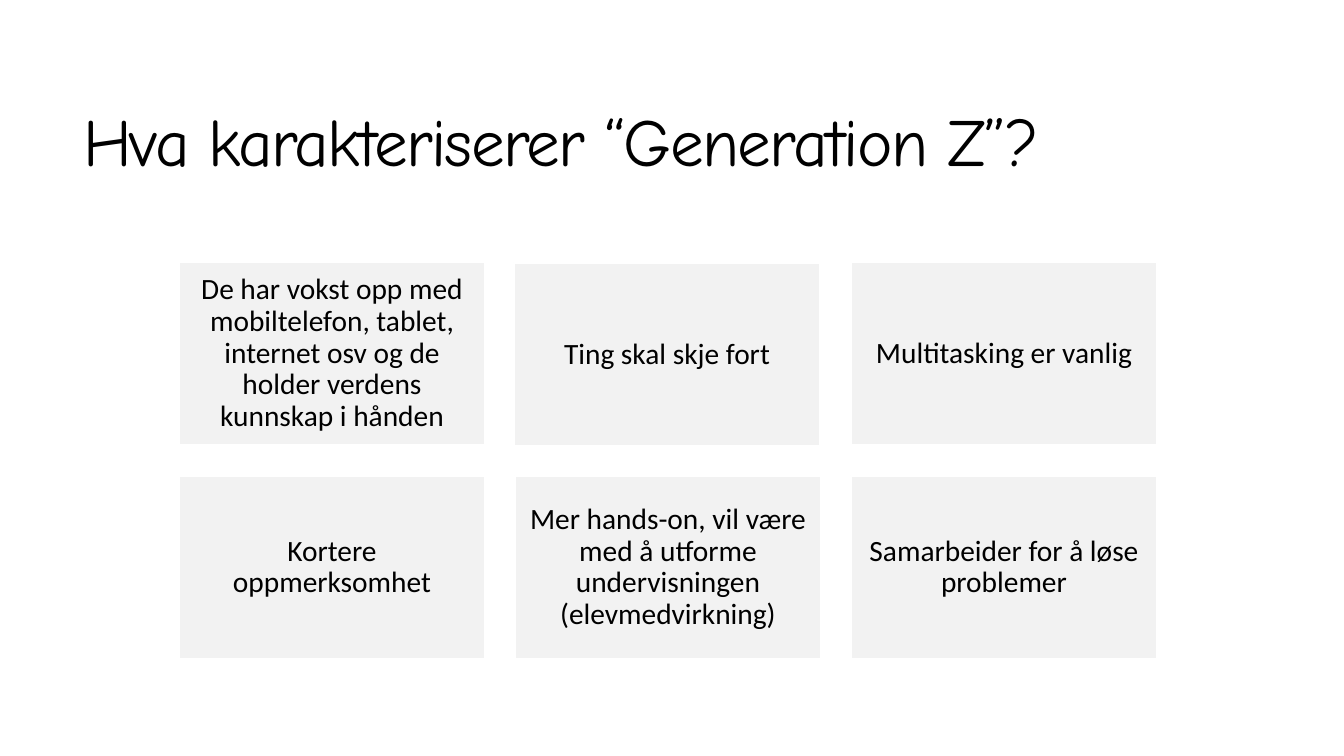
"""Build a title slide with a grid of six traits of Generation Z."""
from pptx import Presentation
from pptx.dml.color import RGBColor
from pptx.enum import shapes, text
from pptx.util import Pt

TITLE = "Hva karakteriserer “Generation Z”?"
TRAITS = [
    "De har vokst opp med mobiltelefon, tablet, internet osv og de holder verdens kunnskap i hånden",
    "Ting skal skje fort",
    "Multitasking er vanlig",
    "Kortere oppmerksomhet",
    "Mer hands-on, vil være med å utforme undervisningen (elevmedvirkning)",
    "Samarbeider for å løse problemer",
]
NUDGES = {"Ting skal skje fort": (-1, 1)}

BLACK = RGBColor(0, 0, 0)
WHITE = RGBColor(255, 255, 255)
GREY = RGBColor(0xF2, 0xF2, 0xF2)

SLIDE_SIZE = (1344, 756)
TITLE_AREA = (73, 55, 1187, 182)
COLUMNS = 3
GRID_LEFT, GRID_TOP = 179, 262
BOX_WIDTH, BOX_HEIGHT = 306, 183
STEP_X, STEP_Y = 336, 214
INSET = 9


def px(length):
    """Turn px into EMU."""
    return round(length * 914400 / 100.8)


def write(shape, words, font_name, size, align, line_spacing):
    """Put one formatted paragraph in a shape and return its run."""
    frame = shape.text_frame
    frame.word_wrap = True
    frame.auto_size = text.MSO_AUTO_SIZE.NONE
    frame.vertical_anchor = text.MSO_ANCHOR.MIDDLE
    para = frame.paragraphs[0]
    para.alignment = align
    para.line_spacing = line_spacing
    para.font.name = font_name
    para.font.size = Pt(size)
    para.font.color.rgb = BLACK
    span = para.add_run()
    span.text = words
    return span


def add_title(page):
    """Place and format the title."""
    title = page.shapes.title
    title.left, title.top, title.width, title.height = map(px, TITLE_AREA)
    span = write(title, TITLE, "Comic Neue", 48, text.PP_ALIGN.LEFT, 0.85)
    span._r.get_or_add_rPr().set("spc", "-120")


def add_trait(page, index, words):
    """Add one trait box at its place in the grid."""
    row, column = divmod(index, COLUMNS)
    shift_x, shift_y = NUDGES.get(words, (0, 0))
    left = GRID_LEFT + column * STEP_X + shift_x
    top = GRID_TOP + row * STEP_Y + shift_y
    box = page.shapes.add_shape(
        shapes.MSO_SHAPE.RECTANGLE, *map(px, (left, top, BOX_WIDTH, BOX_HEIGHT)))
    box.shadow.inherit = False
    box.fill.solid()
    box.fill.fore_color.rgb = GREY
    box.line.color.rgb = WHITE
    box.line.width = Pt(1)
    frame = box.text_frame
    frame.margin_left = frame.margin_right = px(INSET)
    frame.margin_top = frame.margin_bottom = px(INSET)
    write(box, words, "Calibri", 21, text.PP_ALIGN.CENTER, 0.9)


def main():
    """Build and save the deck."""
    deck = Presentation()
    deck.slide_width, deck.slide_height = map(px, SLIDE_SIZE)
    page = deck.slides.add_slide(deck.slide_layouts.get_by_name("Title Only"))
    add_title(page)
    for index, words in enumerate(TRAITS):
        add_trait(page, index, words)
    deck.save("out.pptx")


if __name__ == "__main__":
    main()
